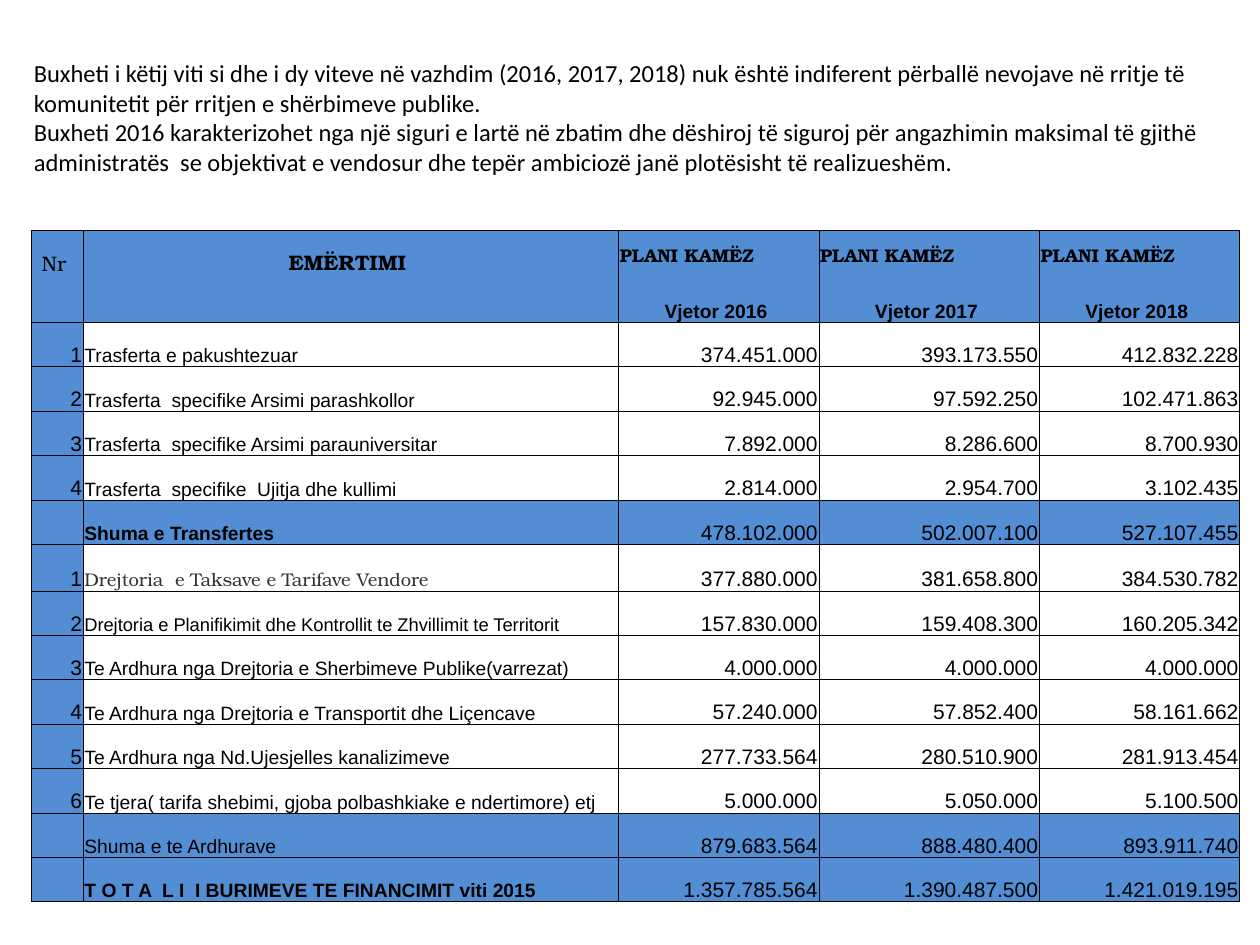
from dataclasses import dataclass

from lxml.etree import SubElement
from pptx import Presentation
from pptx.dml.color import RGBColor
from pptx.enum.text import MSO_ANCHOR, PP_ALIGN
from pptx.oxml.ns import qn
from pptx.util import Inches, Pt


@dataclass(frozen=True)
class Theme:
    ink: str = "000000"
    gray: str = "333333"
    blue: str = "538ED5"
    white: str = "FFFFFF"
    body: str = "Calibri"
    sans: str = "Arial"
    serif: str = "TeX Gyre Bonum"
    intro: float = 14
    large: float = 12
    label: float = 11
    small: float = 10.5
    rule: float = 0.5


THEME = Theme()

INTRO = (
    "Buxheti i këtij viti si dhe i dy viteve në vazhdim (2016, 2017, 2018) nuk është "
    "indiferent përballë nevojave në rritje të komunitetit për rritjen e shërbimeve publike.",
    "Buxheti 2016 karakterizohet nga një siguri e lartë në zbatim dhe dëshiroj të siguroj "
    "për angazhimin maksimal të gjithë administratës  se objektivat e vendosur dhe tepër "
    "ambiciozë janë plotësisht të realizueshëm.",
)

WIDTHS = (0.41, 4.25, 1.59, 1.75, 1.59)
HEAD = ("Nr ", "EMËRTIMI ") + ("PLANI KAMËZ",) * 3
YEARS = ("", "", "Vjetor 2016 ", "Vjetor 2017 ", "Vjetor 2018 ")
TAX = "Drejtoria  e Taksave e Tarifave Vendore"
PLAN = "Drejtoria e Planifikimit dhe Kontrollit te Zhvillimit te Territorit"
SHARE = "Shuma e Transfertes"
TOTAL = "T O T A  L I  I BURIMEVE TE FINANCIMIT viti 2015"
ROWS = (
    ("1", "Trasferta e pakushtezuar", "374.451.000", "393.173.550", "412.832.228"),
    ("2", "Trasferta  specifike Arsimi parashkollor", "92.945.000", "97.592.250", "102.471.863"),
    ("3", "Trasferta  specifike Arsimi parauniversitar", "7.892.000", "8.286.600", "8.700.930"),
    ("4", "Trasferta  specifike  Ujitja dhe kullimi", "2.814.000", "2.954.700", "3.102.435"),
    ("", SHARE, "478.102.000", "502.007.100", "527.107.455"),
    ("1", TAX, "377.880.000", "381.658.800", "384.530.782"),
    ("2", PLAN, "157.830.000", "159.408.300", "160.205.342"),
    ("3", "Te Ardhura nga Drejtoria e Sherbimeve Publike(varrezat)",
     "4.000.000", "4.000.000", "4.000.000"),
    ("4", "Te Ardhura nga Drejtoria e Transportit dhe Liçencave",
     "57.240.000", "57.852.400", "58.161.662"),
    ("5", "Te Ardhura nga Nd.Ujesjelles kanalizimeve",
     "277.733.564", "280.510.900", "281.913.454"),
    ("6", "Te tjera( tarifa shebimi, gjoba polbashkiake e ndertimore) etj",
     "5.000.000", "5.050.000", "5.100.500"),
    ("", "Shuma e te Ardhurave", "879.683.564", "888.480.400", "893.911.740"),
    ("", TOTAL, "1.357.785.564", "1.390.487.500", "1.421.019.195"),
)


def style(run, face, size, color=THEME.ink, bold=False):
    font = run.font
    font.name, font.size, font.bold = face, Pt(size), bold
    font.color.rgb = RGBColor.from_string(color)


def edge(cell, hidden=""):
    """Rule all sides of a cell except the hidden one."""
    props = cell._tc.get_or_add_tcPr()
    for side in "LRTB":
        line = SubElement(props, qn(f"a:ln{side}"), w=str(Pt(THEME.rule)))
        if side == hidden:
            SubElement(line, qn("a:noFill"))
        else:
            fill = SubElement(line, qn("a:solidFill"))
            SubElement(fill, qn("a:srgbClr"), val=THEME.ink)


def put(cell, text, fill, align, *look, anchor=MSO_ANCHOR.BOTTOM, hidden=""):
    edge(cell, hidden)
    cell.fill.solid()
    cell.fill.fore_color.rgb = RGBColor.from_string(fill)
    cell.margin_left = cell.margin_right = cell.margin_top = Inches(0.01)
    cell.margin_bottom = 0
    cell.vertical_anchor = anchor
    if text:
        para = cell.text_frame.paragraphs[0]
        para.text = text
        para.alignment = align
        style(para.runs[0], *look)


def add_intro(slide, left, top, width, height):
    frame = slide.shapes.add_textbox(left, top, width, height).text_frame
    frame.word_wrap = True
    frame.vertical_anchor = MSO_ANCHOR.MIDDLE
    frame.margin_top = Inches(0.29)
    frame.text = "\n".join(INTRO)
    for para in frame.paragraphs:
        style(para.runs[0], THEME.body, THEME.intro)


def fill_head(table):
    t = THEME
    for col, (name, year) in enumerate(zip(HEAD, YEARS)):
        plan = col > 1
        put(table.cell(0, col), name, t.blue,
            PP_ALIGN.LEFT if plan else PP_ALIGN.CENTER,
            t.serif, t.small if plan else t.large, t.ink, col > 0,
            anchor=MSO_ANCHOR.MIDDLE if plan else MSO_ANCHOR.BOTTOM, hidden="B")
        put(table.cell(1, col), year, t.blue, PP_ALIGN.CENTER,
            t.sans, t.label, t.ink, True, hidden="T")


def fill_body(table):
    t = THEME
    looks = {
        TAX: (t.serif, t.small, t.gray),
        PLAN: (t.sans, t.small),
        SHARE: (t.sans, t.label, t.ink, True),
        TOTAL: (t.sans, t.label, t.ink, True),
    }
    for row, texts in enumerate(ROWS, 2):
        for col, text in enumerate(texts):
            # Sum rows have no number and are blue throughout
            fill = t.blue if col == 0 or not texts[0] else t.white
            if col == 1:
                look = looks.get(text, (t.sans, t.label))
                put(table.cell(row, col), text, fill, PP_ALIGN.LEFT, *look)
            else:
                put(table.cell(row, col), text, fill, PP_ALIGN.RIGHT, t.sans, t.large)


def add_budget(slide, left, top, width, height):
    count = len(ROWS) + 2
    table = slide.shapes.add_table(count, len(WIDTHS), left, top, width, height).table
    table.first_row = table.horz_banding = False
    for col, size in zip(table.columns, WIDTHS):
        col.width = Inches(size)

    # A few taller rows, the rest share what is left
    tall = {0: Inches(0.37), 1: Inches(0.36), 7: Inches(0.37)}
    even = (height - sum(tall.values())) // (count - len(tall))
    for index, row in enumerate(table.rows):
        row.height = tall.get(index, even)

    fill_head(table)
    fill_body(table)


def main():
    deck = Presentation()
    deck.slide_width, deck.slide_height = Inches(10), Inches(7.5)
    slide = deck.slides.add_slide(deck.slide_layouts[6])
    add_intro(slide, Inches(0.17), Inches(0.17), Inches(9.67), Inches(1.28))
    add_budget(slide, Inches(0.25), Inches(1.83), Inches(9.58), Inches(5.33))
    deck.save("out.pptx")


if __name__ == "__main__":
    main()
